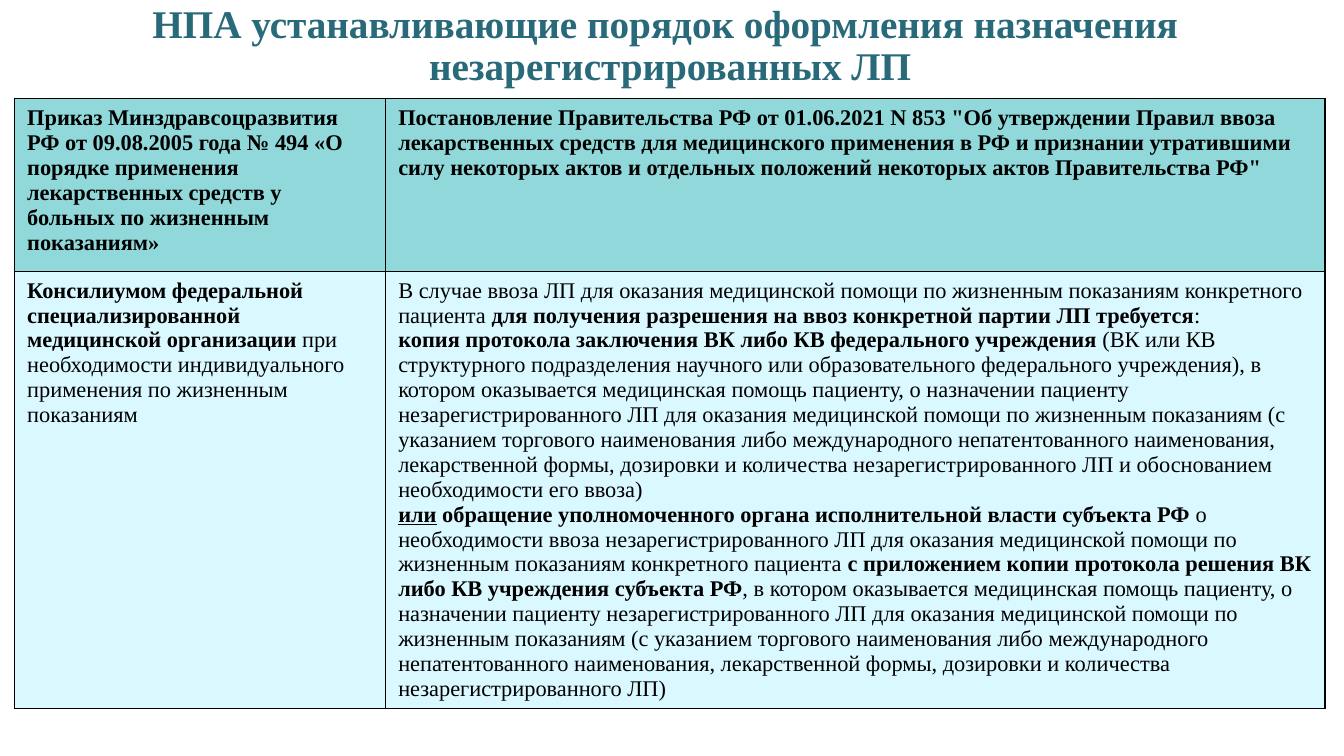
from dataclasses import dataclass

from lxml import etree
from pptx import Presentation
from pptx import util as u
from pptx.dml import color
from pptx.enum import text
from pptx.oxml import ns


@dataclass(frozen=True)
class Theme:
    font: str = "Times New Roman"
    title_size: int = 28
    body_size: int = 16
    title: str = "286A79"
    ink: str = "000000"
    header_fill: str = "90D8DA"
    body_fill: str = "DAF8FF"


@dataclass(frozen=True)
class Run:
    words: str
    bold: bool = False
    underline: bool = False


@dataclass(frozen=True)
class Entry:
    paragraphs: list[list[Run]]
    fill: str


THEME = Theme()
SLIDE_WIDTH, SLIDE_HEIGHT = u.Inches(13.33), u.Inches(7.5)
COLUMN_SHARES = (27.61, 69.92)
ROW_SHARES = (22.8, 45.47)
MARGIN_X, MARGIN_Y = u.Inches(0.13), u.Inches(0.07)

TITLE_LINES = (
    "НПА устанавливающие порядок оформления назначения ",
    "незарегистрированных ЛП",
)
PATIENT_DETAILS = (
    ", в котором оказывается медицинская помощь пациенту, о назначении пациенту "
    "незарегистрированного ЛП для оказания медицинской помощи по жизненным показаниям "
    "(с указанием торгового наименования либо международного непатентованного наименования, "
    "лекарственной формы, дозировки и количества незарегистрированного ЛП"
)
ORDER_494 = [[Run(
    "Приказ Минздравсоцразвития РФ от 09.08.2005 года № 494 «О порядке применения "
    "лекарственных средств у больных по жизненным показаниям»", bold=True)]]
DECREE_853 = [[Run(
    'Постановление Правительства РФ от 01.06.2021 N 853 "Об утверждении Правил ввоза '
    "лекарственных средств для медицинского применения в РФ и признании утратившими силу "
    'некоторых актов и отдельных положений некоторых актов Правительства РФ"', bold=True)]]
COUNCIL = [[
    Run("Консилиумом федеральной специализированной медицинской организации", bold=True),
    Run(" при необходимости индивидуального применения по жизненным показаниям"),
]]
IMPORT_PERMIT = [
    [
        Run("В случае ввоза ЛП для оказания медицинской помощи по жизненным показаниям "
            "конкретного пациента "),
        Run("для получения разрешения на ввоз конкретной партии ЛП требуется", bold=True),
        Run(":"),
    ],
    [
        Run("копия протокола заключения ВК либо КВ федерального учреждения", bold=True),
        Run(" (ВК или КВ структурного подразделения научного или образовательного "
            "федерального учреждения)" + PATIENT_DETAILS
            + " и обоснованием необходимости его ввоза)"),
    ],
    [
        Run("или", bold=True, underline=True),
        Run(" обращение уполномоченного органа исполнительной власти субъекта РФ", bold=True),
        Run(" о необходимости ввоза незарегистрированного ЛП для оказания медицинской помощи "
            "по жизненным показаниям конкретного пациента "),
        Run("с приложением копии протокола решения ВК либо КВ учреждения субъекта РФ", bold=True),
        Run(PATIENT_DETAILS + ")"),
    ],
]
REGULATIONS = [
    [Entry(ORDER_494, THEME.header_fill), Entry(DECREE_853, THEME.header_fill)],
    [Entry(COUNCIL, THEME.body_fill), Entry(IMPORT_PERMIT, THEME.body_fill)],
]


def across(share: float) -> int:
    return round(SLIDE_WIDTH * share / 100)


def down(share: float) -> int:
    return round(SLIDE_HEIGHT * share / 100)


def write(paragraph, words: str, *, size: int = THEME.body_size, ink: str = THEME.ink,
          bold: bool = False, underline: bool = False) -> None:
    run = paragraph.add_run()
    run.text = words
    run.font.name = THEME.font
    run.font.size = u.Pt(size)
    run.font.bold = bold
    run.font.underline = underline
    run.font.color.rgb = color.RGBColor.from_string(ink)


def draw_title(slide) -> None:
    title = slide.shapes.title
    title.left, title.top = across(2.4), down(1.47)
    title.width, title.height = across(94.9), down(9.47)
    frame = title.text_frame
    frame.auto_size = text.MSO_AUTO_SIZE.NONE
    frame.word_wrap = True
    frame.vertical_anchor = text.MSO_ANCHOR.MIDDLE
    heading = frame.paragraphs[0]
    heading.alignment = text.PP_ALIGN.CENTER
    heading.line_spacing = 0.9
    for index, line in enumerate(TITLE_LINES):
        if index:
            heading.add_line_break()
        write(heading, line, size=THEME.title_size, ink=THEME.title, bold=True)


def outline(cell) -> None:
    properties = cell._tc.get_or_add_tcPr()
    for side in ("a:lnL", "a:lnR", "a:lnT", "a:lnB"):
        border = etree.SubElement(properties, ns.qn(side), w=str(u.Pt(1)))
        fill = etree.SubElement(border, ns.qn("a:solidFill"))
        etree.SubElement(fill, ns.qn("a:srgbClr"), val=THEME.ink)


def fill_cell(cell, entry: Entry) -> None:
    outline(cell)
    cell.fill.solid()
    cell.fill.fore_color.rgb = color.RGBColor.from_string(entry.fill)
    cell.margin_left = cell.margin_right = MARGIN_X
    cell.margin_top = cell.margin_bottom = MARGIN_Y
    frame = cell.text_frame
    for index, runs in enumerate(entry.paragraphs):
        paragraph = frame.add_paragraph() if index else frame.paragraphs[0]
        for run in runs:
            write(paragraph, run.words, bold=run.bold, underline=run.underline)


def draw_regulations(slide) -> None:
    regulations = slide.shapes.add_table(
        len(ROW_SHARES), len(COLUMN_SHARES), across(1.05), down(13.07),
        across(sum(COLUMN_SHARES)), down(sum(ROW_SHARES))).table
    for column, share in zip(regulations.columns, COLUMN_SHARES):
        column.width = across(share)
    for row, share, entries in zip(regulations.rows, ROW_SHARES, REGULATIONS):
        row.height = down(share)
        for cell, entry in zip(row.cells, entries):
            fill_cell(cell, entry)


def main() -> None:
    deck = Presentation()
    deck.slide_width, deck.slide_height = SLIDE_WIDTH, SLIDE_HEIGHT
    slide = deck.slides.add_slide(deck.slide_layouts.get_by_name("Title Only"))
    draw_title(slide)
    draw_regulations(slide)
    deck.save("out.pptx")


if __name__ == "__main__":
    main()
